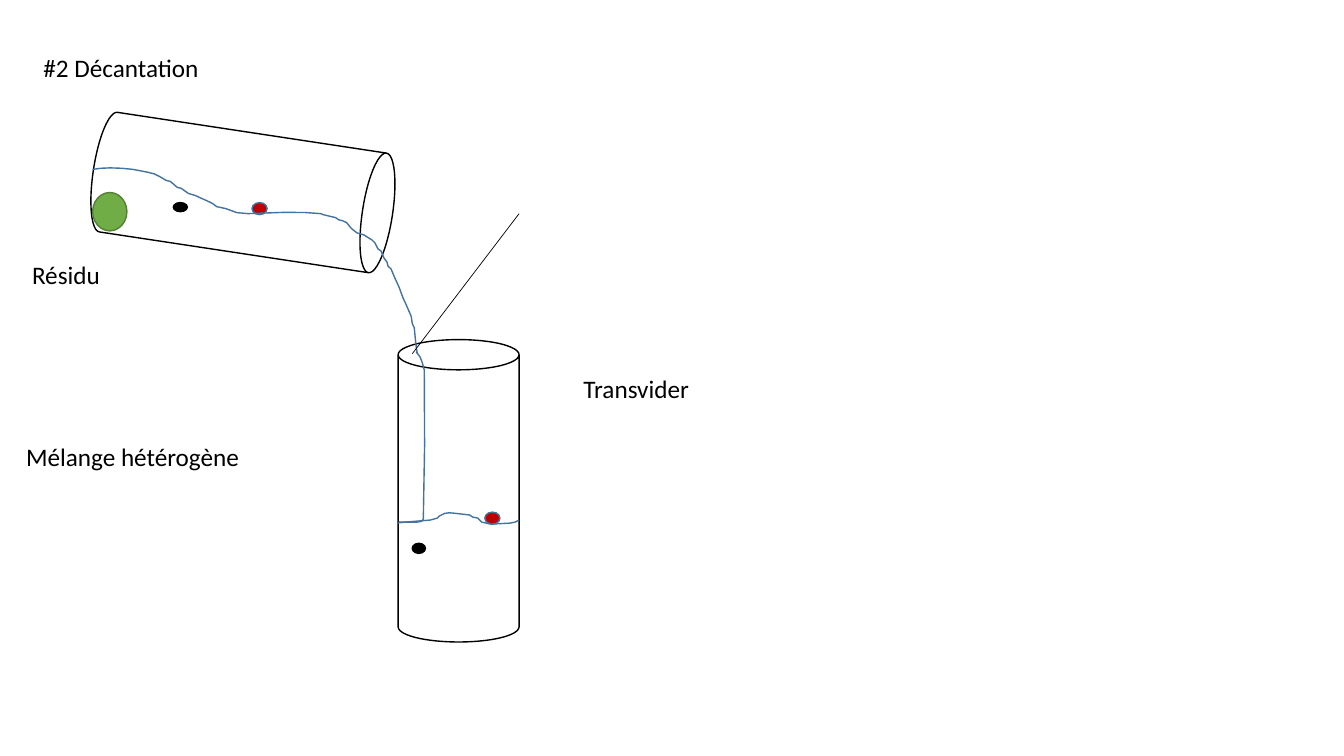
from dataclasses import dataclass
from typing import Optional

from pptx import Presentation
from pptx.dml.color import RGBColor as Rgb
from pptx.enum.shapes import MSO_CONNECTOR as Link, MSO_SHAPE as Kind
from pptx.enum.text import MSO_ANCHOR as Anchor, MSO_AUTO_SIZE as Fit, PP_ALIGN as Align
from pptx.oxml.ns import qn
from pptx.shapes.autoshape import Shape
from pptx.shapes.shapetree import SlideShapes as Shapes
from pptx.util import Pt


@dataclass(frozen=True)
class Theme:
    font: str = "Calibri"
    size: float = 18
    edge: float = 1
    thin: float = 0.5
    black: str = "000000"
    white: str = "FFFFFF"
    green: str = "70AD47"
    moss: str = "538035"
    red: str = "C00000"
    blue: str = "43739E"


@dataclass(frozen=True)
class Box:
    left: float
    top: float
    width: float
    height: float


@dataclass(frozen=True)
class Label:
    text: str
    box: Box


@dataclass(frozen=True)
class Solid:
    kind: Kind
    box: Box
    fill: str
    line: str
    turn: float = 0


@dataclass(frozen=True)
class Flow:
    points: tuple[tuple[float, float], ...]


LOOK = Theme()
DOT = Kind.FLOWCHART_CONNECTOR

TITLE = Label("#2 Décantation", Box(23.8, 33.8, 157.7, 29))
LABELS = (
    Label("Résidu", Box(15.8, 181.4, 157.7, 51)),
    Label("Mélange hétérogène", Box(11.5, 311.8, 206, 29)),
    Label("Transvider", Box(409.7, 262.8, 157.7, 29)),
)

STREAM = Flow((
    (66.2, 121), (72, 120.2), (78.8, 119.9), (87, 120.2), (95, 121),
    (105.8, 123.1), (110.2, 124.2), (113.8, 126), (118.8, 128.9),
    (121.7, 129.6), (126.7, 133.9), (129.6, 134.6), (134.6, 138.2),
    (139.7, 139.7), (142.6, 141.1), (147.6, 143.3), (151.9, 145.4),
    (154.8, 147.6), (161.3, 149), (169.2, 151.9), (177.1, 152.6),
    (203, 151.7), (218, 151.8), (229, 152.6), (231.1, 153.4),
    (239.8, 155.5), (241.9, 157), (244.8, 157.7), (247.7, 159.1),
    (251, 163.2), (254.9, 166.3), (259.9, 167.8), (265.7, 171.4),
    (267.8, 173.5), (270, 177.8), (272.2, 179.3), (274.3, 184.3),
    (276.5, 187.2), (277.2, 190.1), (279.4, 192.2), (281.5, 197.3),
    (285.1, 205.2), (288, 213.1), (289.4, 216), (291.6, 221),
    (293.8, 226.1), (294.5, 231.1), (295.9, 234), (296.6, 241.2),
    (297.4, 248.4), (298.1, 252.7),
))
FALL = Flow((
    (297.4, 251.3), (300.2, 255.2), (301.7, 259.2), (303.1, 264.2),
    (303.3, 318), (302.4, 370.8), (301, 372.5), (297.4, 373), (285.1, 373),
))
LEVEL = Flow((
    (284.4, 373.5), (289.4, 373), (307.4, 371.5), (312.5, 370.1),
    (313.9, 368.6), (317.5, 366.8), (321, 366.3), (326, 366.8),
    (335.5, 367.9), (337.7, 369.4), (341.3, 370.1), (344.2, 373),
    (350.6, 374.4), (364.3, 373.7), (367.9, 373), (370.8, 371.5),
))

PARTS: tuple[Solid | Flow, ...] = (
    Solid(Kind.CAN, Box(130.3, 29.5, 86.4, 216), LOOK.white, LOOK.black, 98.6),
    Solid(Kind.CAN, Box(284.4, 242.6, 86.4, 216), LOOK.white, LOOK.black),
    Solid(DOT, Box(66.2, 137.5, 24.5, 27.4), LOOK.green, LOOK.moss),
    Solid(DOT, Box(123.8, 144.7, 10.1, 6.5), LOOK.black, LOOK.black),
    Solid(DOT, Box(180, 144.7, 10.8, 8.6), LOOK.red, LOOK.blue),
    STREAM,
    FALL,
    LEVEL,
    Solid(DOT, Box(346.3, 365.8, 10.8, 8.6), LOOK.red, LOOK.blue),
    Solid(DOT, Box(294.5, 388.1, 9.4, 7.2), LOOK.black, LOOK.black),
)


def paint(shape: Shape, fill: Optional[str], line: str) -> None:
    shape.shadow.inherit = False
    if fill:
        shape.fill.solid()
        shape.fill.fore_color.rgb = Rgb.from_string(fill)
    else:
        shape.fill.background()
    shape.line.color.rgb = Rgb.from_string(line)
    shape.line.width = Pt(LOOK.edge)


def write(shape: Shape, label: Label) -> None:
    box = label.box
    shape.left, shape.top = Pt(box.left), Pt(box.top)
    shape.width, shape.height = Pt(box.width), Pt(box.height)
    frame = shape.text_frame
    frame.text = label.text
    frame.word_wrap = True
    frame.auto_size = Fit.NONE
    frame.vertical_anchor = Anchor.TOP
    for para in frame.paragraphs:
        para.alignment = Align.LEFT
        for run in para.runs:
            run.font.name = LOOK.font
            run.font.size = Pt(LOOK.size)
            run.font.color.rgb = Rgb.from_string(LOOK.black)


def draw(shapes: Shapes, part: Solid | Flow) -> None:
    if isinstance(part, Solid):
        box = part.box
        shape = shapes.add_shape(
            part.kind, Pt(box.left), Pt(box.top), Pt(box.width), Pt(box.height))
        shape.rotation = part.turn
        paint(shape, part.fill, part.line)
    else:
        first, *rest = [(Pt(x), Pt(y)) for x, y in part.points]
        pen = shapes.build_freeform(*first)
        pen.add_line_segments(rest, close=False)
        paint(pen.convert_to_shape(), None, LOOK.blue)


def rule(shapes: Shapes, x: float, y: float, end: float, top: float) -> None:
    line = shapes.add_connector(Link.STRAIGHT, Pt(x), Pt(y), Pt(end), Pt(top))
    line.line.color.rgb = Rgb.from_string(LOOK.black)
    line.line.width = Pt(LOOK.thin)
    props = line._element.spPr
    props.append(props.makeelement(qn("a:effectLst"), {}))


def main() -> None:
    deck = Presentation()
    deck.slide_width, deck.slide_height = Pt(960), Pt(540)
    slide = deck.slides.add_slide(deck.slide_layouts[5])
    shapes = slide.shapes
    write(shapes.title, TITLE)
    for part in PARTS:
        draw(shapes, part)
    for label in LABELS:
        write(shapes.add_textbox(0, 0, 0, 0), label)
    rule(shapes, 294.5, 252.7, 370.8, 152.6)
    deck.save("out.pptx")


if __name__ == "__main__":
    main()
